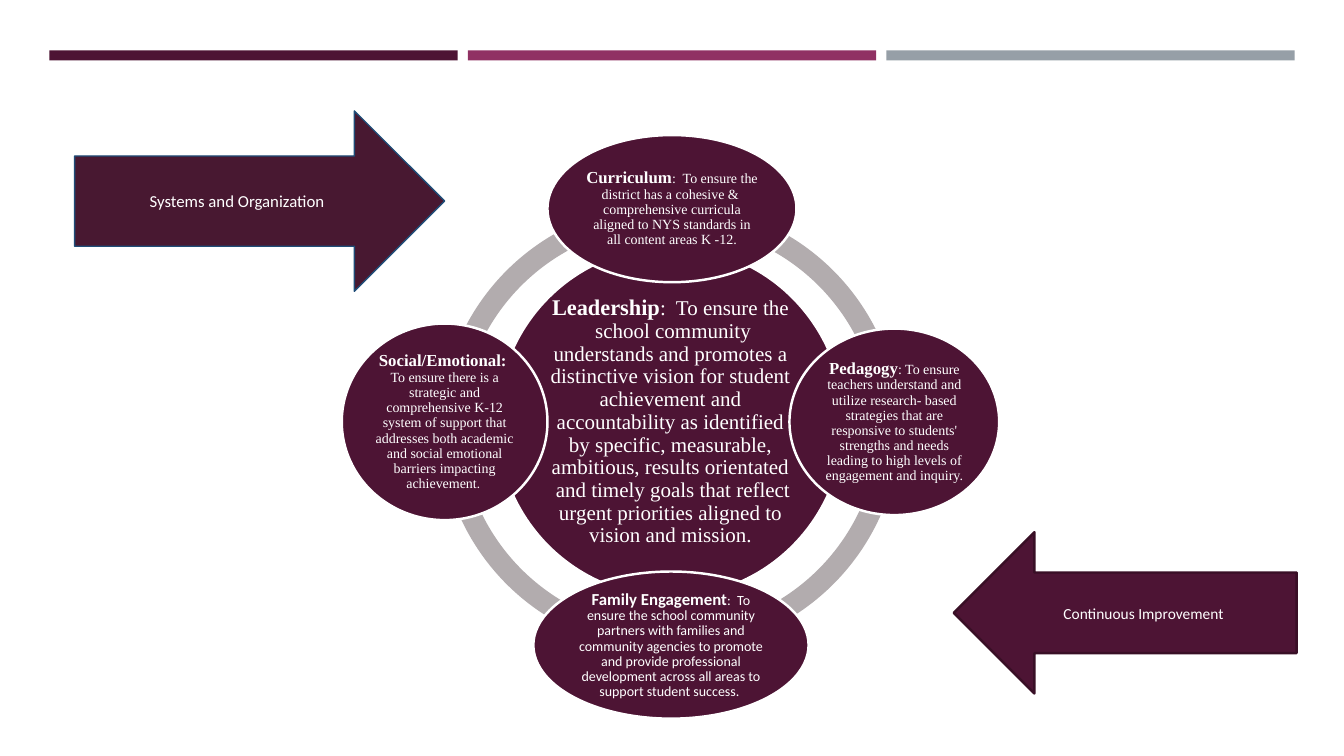
from pptx import Presentation
from pptx import util as u
from pptx.dml.color import RGBColor
from pptx.enum import shapes, text

PLUM = RGBColor(0x4D, 0x14, 0x34)
DARK_PLUM = RGBColor(0x48, 0x18, 0x31)
PLUM_EDGE = RGBColor(0x39, 0x0F, 0x26)
BLUE_EDGE = RGBColor(0x1F, 0x4D, 0x78)
MAGENTA = RGBColor(0x90, 0x31, 0x63)
SLATE = RGBColor(0x96, 0x9F, 0xA7)
RING_GREY = RGBColor(0xB2, 0xAC, 0xAE)
WHITE = RGBColor(0xFF, 0xFF, 0xFF)
SERIF, SANS = "Times New Roman", "Calibri"
KIND = shapes.MSO_SHAPE


class GoalSlide:
    """Holds the slide and draws each kind of element on it."""

    def __init__(self, slide):
        self.slide = slide

    def shape(self, kind, box, fill, edge=None, edge_width=1.75, adjust=()):
        item = self.slide.shapes.add_shape(kind, *map(u.Inches, box))
        item.shadow.inherit = False
        item.fill.solid()
        item.fill.fore_color.rgb = fill
        if edge is None:
            item.line.fill.background()
        else:
            item.line.color.rgb = edge
            item.line.width = u.Pt(edge_width)
        for index, value in enumerate(adjust):
            item.adjustments[index] = value
        return item

    def label(self, item, runs, spacing=1.0):
        """Fill a shape with centred runs of (wording, size, font, bold)."""
        frame = item.text_frame
        frame.word_wrap = True
        frame.vertical_anchor = text.MSO_ANCHOR.MIDDLE
        paragraph = frame.paragraphs[0]
        paragraph.alignment = text.PP_ALIGN.CENTER
        paragraph.line_spacing = spacing
        for wording, size, font, bold in runs:
            run = paragraph.add_run()
            run.text = wording
            run.font.size = u.Pt(size)
            run.font.name = font
            run.font.bold = bold
            run.font.color.rgb = WHITE

    def goal(self, box, heading, detail, font=SERIF, sizes=(12, 10), ending=()):
        oval = self.shape(KIND.OVAL, box, PLUM, WHITE)
        frame = oval.text_frame
        frame.margin_left = frame.margin_right = u.Inches(0.02)
        frame.margin_top = frame.margin_bottom = u.Inches(0.02)
        runs = [(heading, sizes[0], font, True), (detail, sizes[1], font, False)]
        self.label(oval, runs + list(ending), spacing=0.9)

    def arrow(self, kind, box, wording, size, fill, edge, edge_width, spacing=1.0):
        arrow = self.shape(kind, box, fill, edge, edge_width)
        self.label(arrow, [(wording, size, SANS, False)], spacing)


def main():
    deck = Presentation()
    deck.slide_width, deck.slide_height = u.Inches(13.33), u.Inches(7.5)
    page = GoalSlide(deck.slides.add_slide(deck.slide_layouts[6]))

    # Colour bars along the top
    for column, colour in enumerate((PLUM, MAGENTA, SLATE)):
        page.shape(KIND.RECTANGLE, (0.49 + 4.15 * column, 0.5, 4.05, 0.1), colour)

    # Ring joining the outer goals, one arc per quarter
    for left, top, start, end in (
        (4.36, 2.02, 109.5, 162.6),
        (4.36, 1.92, 53.6, 108),
        (4.39, 1.92, 0, 54),
        (4.39, 2.02, 162.14, 214.49),
    ):
        page.shape(KIND.BLOCK_ARC, (left, top, 4.54, 4.54), RING_GREY,
                   adjust=(start, end, 0.046))

    # Central goal, then the four around it
    page.goal((4.93, 2.45, 3.44, 3.47), "Leadership",
              ":  To ensure the  school community understands and promotes a "
              "distinctive vision for student achievement and accountability as "
              "identified by specific, measurable, ambitious, results orientated  "
              "and timely goals that reflect urgent priorities aligned to vision "
              "and mission.", sizes=(16, 15))
    page.goal((5.43, 1.34, 2.47, 1.46), "Curriculum",
              ":  To ensure the district has a cohesive &  comprehensive curricula "
              "aligned to NYS standards in all content areas K -12.")
    page.goal((7.83, 3.26, 2.08, 1.85), "Pedagogy",
              ": To ensure teachers understand and utilize research- based "
              "strategies that are responsive to students' strengths and needs "
              "leading to high levels of engagement and inquiry.")
    page.goal((5.29, 5.67, 2.73, 1.46), "Family Engagement",
              ":  To ensure the school community partners with families and "
              "community agencies to promote and provide professional development "
              "across all areas to support student success. ", font=SANS)
    page.goal((3.39, 3.21, 2.04, 1.95), "Social/Emotional:",
              "  To ensure there is a strategic and comprehensive K-12 system of "
              "support that addresses both academic and social emotional barriers "
              "impacting achievement", ending=[(". ", 9, SANS, False)])

    # Arrows pointing at the ring
    page.arrow(KIND.LEFT_ARROW, (9.46, 5.28, 3.4, 1.6), "Continuous Improvement ",
               11, PLUM, PLUM_EDGE, 1.75, spacing=1.07)
    page.arrow(KIND.RIGHT_ARROW, (0.74, 1.1, 3.67, 1.79), "Systems and Organization",
               12, DARK_PLUM, BLUE_EDGE, 1)

    deck.save("out.pptx")


if __name__ == "__main__":
    main()
